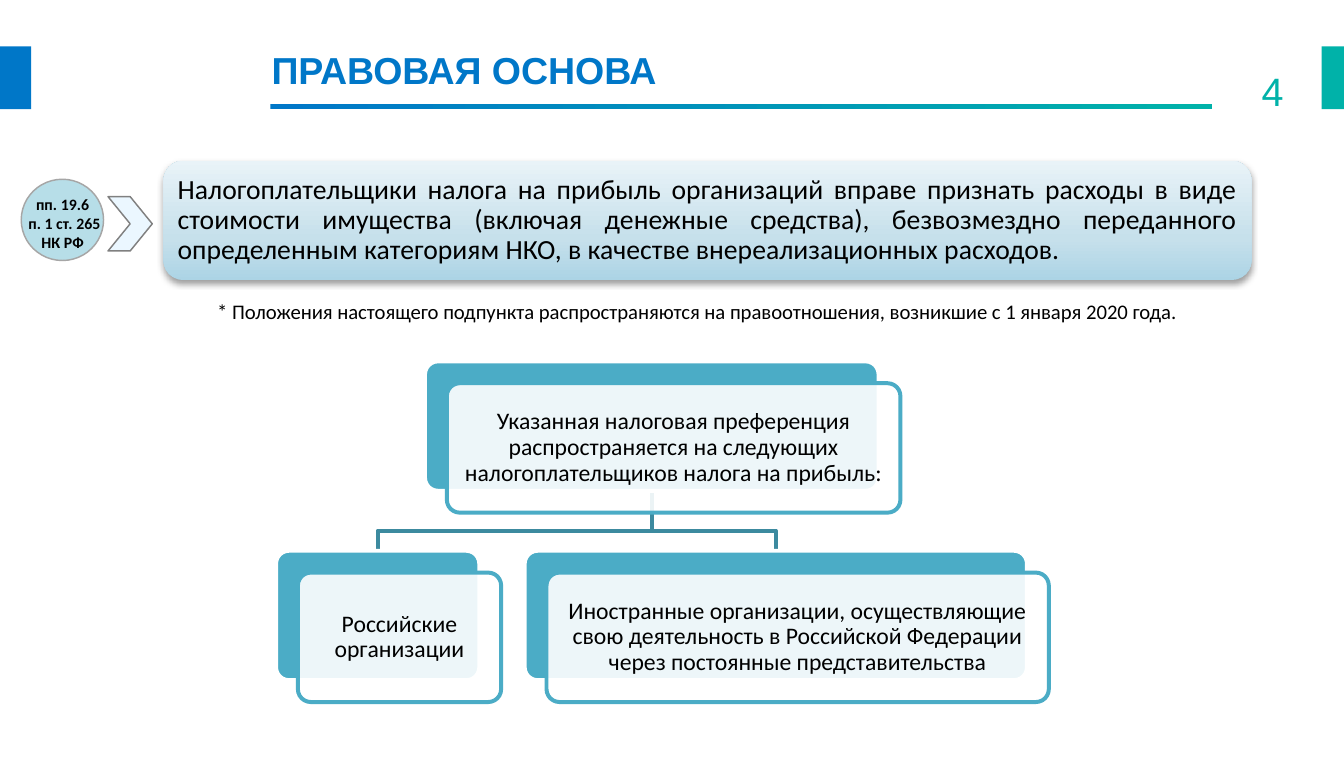
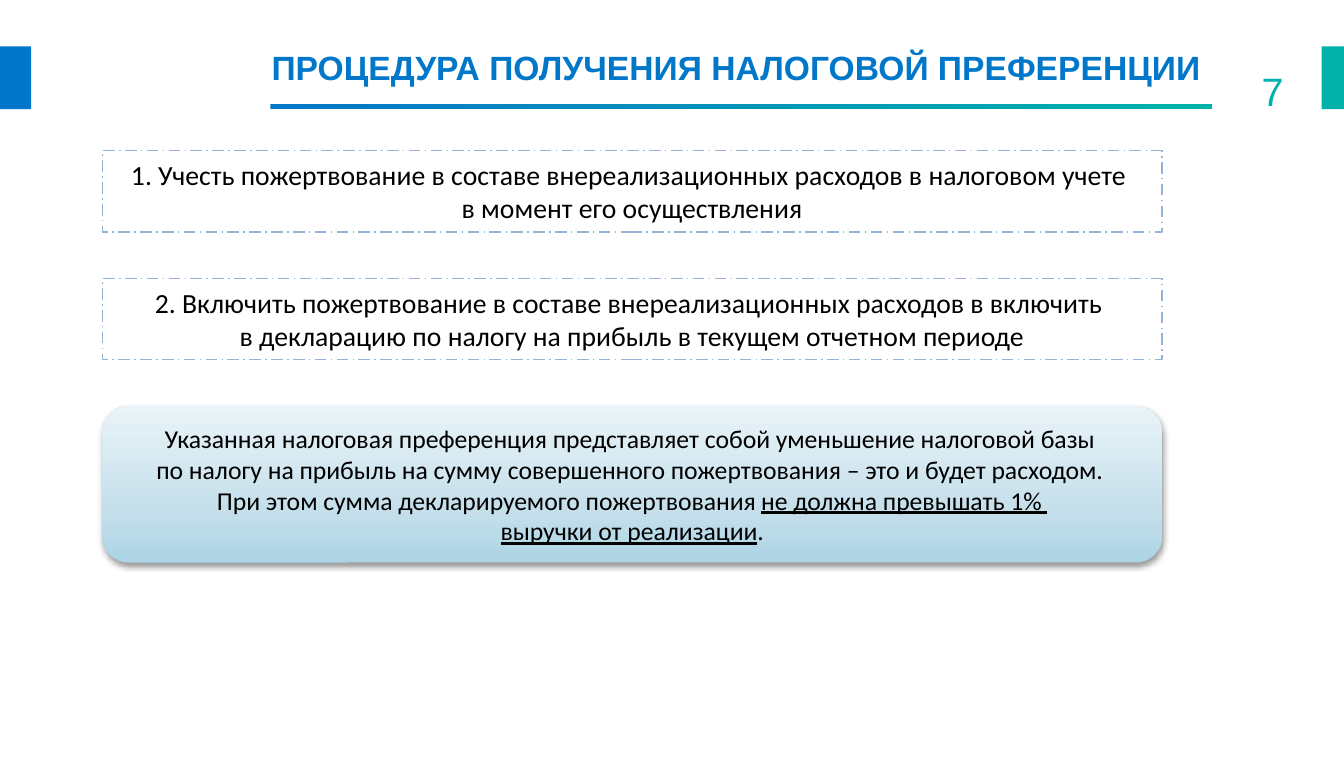
import pptx
import pptx.dml.color
import pptx.enum.dml
import pptx.enum.shapes
import pptx.enum.text
import pptx.oxml
import pptx.oxml.ns
import pptx.util
from lxml import etree

Cm = pptx.util.Cm
Pt = pptx.util.Pt
RGBColor = pptx.dml.color.RGBColor
SHAPE = pptx.enum.shapes.MSO_SHAPE
ALIGN = pptx.enum.text.PP_ALIGN
ANCHOR = pptx.enum.text.MSO_ANCHOR
qn = pptx.oxml.ns.qn

BLUE = RGBColor(0x00, 0x77, 0xC8)
TEAL = RGBColor(0x00, 0xB2, 0xA9)
BLACK = RGBColor(0x00, 0x00, 0x00)
WHITE = RGBColor(0xFF, 0xFF, 0xFF)
CARD_BLUE = RGBColor(0x4B, 0xAC, 0xC6)
BRANCH_BLUE = RGBColor(0x3C, 0x8A, 0x9F)
STEP_BORDER = RGBColor(0x95, 0xB3, 0xD7)
BADGE_FILL = RGBColor(0xB7, 0xDE, 0xE8)
BADGE_LINE = RGBColor(0xA6, 0xA6, 0xA6)
CHEVRON_FILL = RGBColor(0xEB, 0xF7, 0xFF)
CHEVRON_LINE = RGBColor(0x80, 0x80, 0x80)
RULE_STOPS = [(0, BLUE), (100, TEAL)]
BANNER_STOPS = [
    (0, RGBColor(0xAC, 0xD4, 0xE5)),
    (35, RGBColor(0xC6, 0xE0, 0xEB)),
    (100, RGBColor(0xE9, 0xF3, 0xF8)),
]

TITLE_FONT = {"name": "Arial", "size": Pt(19), "bold": True}
NUMBER_FONT = {"name": "Arial", "size": Pt(20)}
BODY_FONT = {"name": "Calibri", "size": Pt(14)}

CARD_HEIGHT = 2.31
CARD_OFFSET = 0.39


def set_attributes(target, values):
    for name, value in values.items():
        setattr(target, name, value)


def add_shape(slide, kind, box, fill=None, line=None, width=0.75):
    """Add a preset shape; box is left, top, width, height in centimetres."""
    shape = slide.shapes.add_shape(kind, *map(Cm, box))
    shape.shadow.inherit = False
    if fill is None:
        shape.fill.background()
    else:
        shape.fill.solid()
        shape.fill.fore_color.rgb = fill
    set_line(shape, line, width)
    return shape


def set_line(shape, color, width):
    if color is None:
        shape.line.fill.background()
    else:
        shape.line.color.rgb = color
        shape.line.width = Pt(width)


def set_gradient(shape, stops, angle):
    shape.fill.gradient()
    shape.fill.gradient_angle = angle
    stop_list = shape.fill._xPr.find(".//" + qn("a:gsLst"))
    for stop in list(stop_list):
        stop_list.remove(stop)
    for position, color in stops:
        stop = etree.SubElement(stop_list, qn("a:gs"), pos=str(position * 1000))
        etree.SubElement(stop, qn("a:srgbClr"), val=str(color))


def set_opacity(shape, percent):
    color = shape.fill._xPr.find(qn("a:solidFill")).find(qn("a:srgbClr"))
    etree.SubElement(color, qn("a:alpha"), val=str(percent * 1000))


def add_soft_shadow(shape):
    effects = shape._element.spPr.find(qn("a:effectLst"))
    shadow = etree.SubElement(
        effects, qn("a:outerShdw"), blurRad=str(Pt(3.1)), dist=str(Pt(1.6)),
        dir="5400000", rotWithShape="0")
    color = etree.SubElement(shadow, qn("a:srgbClr"), val=str(BLACK))
    etree.SubElement(color, qn("a:alpha"), val="38000")


def write_text(shape, runs, font, color=BLACK, align=ALIGN.CENTER,
               anchor=ANCHOR.MIDDLE, inset=None, spacing=1.0):
    """Fill the shape with one paragraph; runs is a string or (text, font changes) pairs."""
    frame = shape.text_frame
    set_attributes(frame, {"word_wrap": True, "vertical_anchor": anchor})
    if inset is not None:
        sides = ("margin_left", "margin_top", "margin_right", "margin_bottom")
        set_attributes(frame, dict.fromkeys(sides, Cm(inset)))
    paragraph = frame.paragraphs[0]
    set_attributes(paragraph, {"alignment": align, "line_spacing": spacing})
    if isinstance(runs, str):
        runs = [(runs, {})]
    for text, changes in runs:
        for index, part in enumerate(text.split("\n")):
            if index:
                paragraph.add_line_break()
            run = paragraph.add_run()
            run.text = part
            set_attributes(run.font, {**font, **changes})
            run.font.color.rgb = color


def add_text(slide, box, runs, font, **options):
    write_text(slide.shapes.add_textbox(*map(Cm, box)), runs, font, **options)


def add_slide(presentation, title, number, title_size):
    """Add a blank slide with the side bars, title, rule and page number."""
    slide = presentation.slides.add_slide(presentation.slide_layouts[6])
    add_shape(slide, SHAPE.RECTANGLE, (0, 0.83, 0.56, 1.12), BLUE)
    add_shape(slide, SHAPE.RECTANGLE, (23.6, 0.83, 0.4, 1.12), TEAL)
    rule = add_shape(slide, SHAPE.RECTANGLE, (4.83, 1.85, 16.81, 0.1))
    set_gradient(rule, RULE_STOPS, 0)
    add_text(slide, (4.85, 0.84, 17, 0.9), title,
             {**TITLE_FONT, "size": Pt(title_size)}, color=BLUE,
             align=ALIGN.LEFT, anchor=ANCHOR.TOP, inset=0)
    add_text(slide, (21.82, 1.27, 1.1, 0.71), number, NUMBER_FONT, color=TEAL,
             align=ALIGN.RIGHT, inset=0)
    return slide


def add_banner(slide, box, runs, size, **options):
    banner = add_shape(slide, SHAPE.ROUNDED_RECTANGLE, box)
    set_gradient(banner, BANNER_STOPS, 90)
    add_soft_shadow(banner)
    write_text(banner, runs, {**BODY_FONT, "size": Pt(size)}, inset=0.15, **options)


def add_card(slide, left, top, width, text):
    """Add a solid card with a translucent text card shifted over it."""
    back_box = (left, top, width, CARD_HEIGHT)
    front_box = (left + CARD_OFFSET, top + CARD_OFFSET, width, CARD_HEIGHT)
    back = add_shape(slide, SHAPE.ROUNDED_RECTANGLE, back_box, CARD_BLUE, WHITE, 2)
    front = add_shape(slide, SHAPE.ROUNDED_RECTANGLE, front_box, WHITE, CARD_BLUE, 2)
    for card in (back, front):
        card.adjustments[0] = 0.1
    set_opacity(front, 90)
    write_text(front, text, {**BODY_FONT, "size": Pt(12)}, inset=0.13, spacing=0.9)


def add_branch(slide, parent, child):
    """Draw an elbow line from the bottom of one card to the top of another."""
    start_x, end_x = (card[0] + card[2] / 2 for card in (parent, child))
    start_y, end_y = parent[1] + CARD_HEIGHT, child[1]
    bend_y = end_y - 0.36
    builder = slide.shapes.build_freeform(Cm(start_x), Cm(start_y))
    corners = [(start_x, bend_y), (end_x, bend_y), (end_x, end_y)]
    builder.add_line_segments([(Cm(x), Cm(y)) for x, y in corners], close=False)
    branch = builder.convert_to_shape()
    branch.shadow.inherit = False
    branch.fill.background()
    set_line(branch, BRANCH_BLUE, 2)


def build_legal_basis(presentation):
    slide = add_slide(presentation, "ПРАВОВАЯ ОСНОВА", "4", 19)
    parent = (7.59, 6.45, 8.1, "Указанная налоговая преференция распространяется "
              "на следующих налогоплательщиков налога на прибыль:")
    children = [
        (4.93, 9.83, 3.63, "Российские организации"),
        (9.37, 9.83, 8.97, "Иностранные организации, осуществляющие свою деятельность "
         "в Российской Федерации через постоянные представительства"),
    ]
    for child in children:
        add_branch(slide, parent, child)
    for card in (parent, *children):
        add_card(slide, *card)

    add_banner(slide, (2.92, 2.87, 19.43, 2.13),
               "Налогоплательщики налога на прибыль организаций вправе признать расходы "
               "в виде стоимости имущества (включая денежные средства), безвозмездно "
               "переданного определенным категориям НКО, в качестве внереализационных "
               "расходов.", 14, align=ALIGN.JUSTIFY, spacing=0.9)
    add_shape(slide, SHAPE.OVAL, (0.38, 3.2, 1.47, 1.45), BADGE_FILL, BADGE_LINE)
    add_text(slide, (0.18, 3.35, 1.88, 1.27), "пп. 19.6\n п. 1 ст. 265 НК РФ",
             {**BODY_FONT, "size": Pt(8), "bold": True}, anchor=ANCHOR.TOP)
    add_shape(slide, SHAPE.CHEVRON, (1.93, 3.51, 0.79, 0.97), CHEVRON_FILL, CHEVRON_LINE)
    add_text(slide, (3.63, 5.21, 19.2, 1.4),
             "* Положения настоящего подпункта распространяются на правоотношения, "
             "возникшие с 1 января 2020 года.",
             {**BODY_FONT, "size": Pt(10.5)}, align=ALIGN.LEFT, anchor=ANCHOR.TOP)


def build_procedure(presentation):
    slide = add_slide(presentation, "ПРОЦЕДУРА ПОЛУЧЕНИЯ НАЛОГОВОЙ ПРЕФЕРЕНЦИИ", "7", 17)
    left, top, width, pitch = 1.83, 2.69, 18.92, 2.28
    steps = [
        "1. Учесть пожертвование в составе внереализационных расходов в налоговом учете \n"
        "в момент его осуществления",
        "2. Включить пожертвование в составе внереализационных расходов в включить \n"
        "в декларацию по налогу на прибыль в текущем отчетном периоде",
    ]
    for index, text in enumerate(steps):
        box = (left, top + index * pitch, width, 1.45)
        step = add_shape(slide, SHAPE.RECTANGLE, box, line=STEP_BORDER)
        step.line.dash_style = pptx.enum.dml.MSO_LINE.LONG_DASH_DOT
        write_text(step, text, BODY_FONT)

    conclusion = [
        ("Указанная налоговая преференция представляет собой уменьшение налоговой базы \n"
         "по налогу на прибыль на сумму совершенного пожертвования – это и будет расходом. \n"
         "При этом сумма декларируемого пожертвования ", {}),
        ("не должна превышать 1% \nвыручки от реализации", {"underline": True}),
        (".", {}),
    ]
    add_banner(slide, (left, top + len(steps) * pitch, width, 2.79), conclusion, 13)


def main():
    presentation = pptx.Presentation()
    presentation.slide_width = Cm(24)
    presentation.slide_height = Cm(13.51)
    build_legal_basis(presentation)
    build_procedure(presentation)
    presentation.save("out.pptx")


if __name__ == "__main__":
    main()
